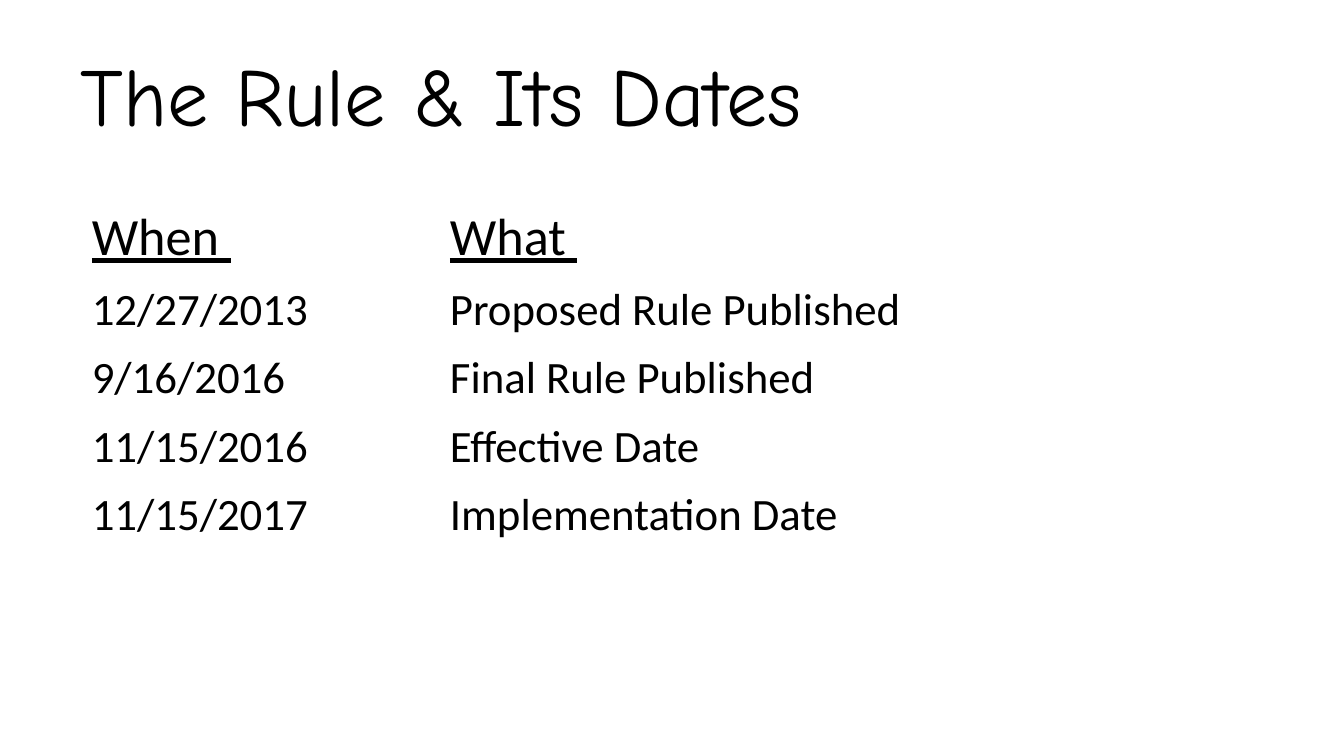
from dataclasses import dataclass

from pptx import Presentation
from pptx.dml.color import RGBColor as Rgb
from pptx.enum.text import MSO_ANCHOR as Anchor
from pptx.util import Cm, Pt


@dataclass(frozen=True)
class Theme:
    ink: Rgb = Rgb(0, 0, 0)
    head: str = "Comic Neue"
    body: str = "Calibri"
    title: Pt = Pt(44)
    label: Pt = Pt(28)
    text: Pt = Pt(24)


THEME = Theme()
TITLE = "The Rule & Its Dates"
# The underline of each label runs on under its closing space.
LABELS = ("When ", "What ")
DATES = [
    ("12/27/2013", "Proposed Rule Published"),
    ("9/16/2016", "Final Rule Published"),
    ("11/15/2016", "Effective Date"),
    ("11/15/2017", "Implementation Date"),
]


def style(para, name, size, under=False):
    font = para.font
    font.name, font.size, font.underline = name, size, under
    font.color.rgb = THEME.ink


def add_title(slide, box, text):
    frame = slide.shapes.add_textbox(*box).text_frame
    frame.word_wrap = True
    frame.vertical_anchor = Anchor.MIDDLE
    para = frame.paragraphs[0]
    para.text = text
    style(para, THEME.head, THEME.title)


def add_dates(slide, box, split):
    """Fill the box with a plain table; split is the width of the date column."""
    rows = [LABELS, *DATES]
    table = slide.shapes.add_table(len(rows), len(LABELS), *box).table
    table.first_row = table.horz_banding = False
    table.columns[0].width = split
    table.columns[1].width = box[2] - split
    table.rows[0].height = Cm(1.46)
    for r, row in enumerate(rows):
        if r:
            table.rows[r].height = Cm(1.29)
        for c, text in enumerate(row):
            cell = table.cell(r, c)
            cell.fill.background()
            para = cell.text_frame.paragraphs[0]
            para.text = text
            style(para, THEME.body, THEME.text if r else THEME.label, r == 0)


def main():
    deck = Presentation()
    deck.slide_width, deck.slide_height = Cm(25.4), Cm(14.28)
    slide = deck.slides.add_slide(deck.slide_layouts[6])
    add_title(slide, (Cm(1.27), Cm(0.58), Cm(20.32), Cm(2.39)), TITLE)
    add_dates(slide, (Cm(1.48), Cm(3.76), Cm(19.9), Cm(6.62)), Cm(6.77))
    deck.save("out.pptx")


if __name__ == "__main__":
    main()
